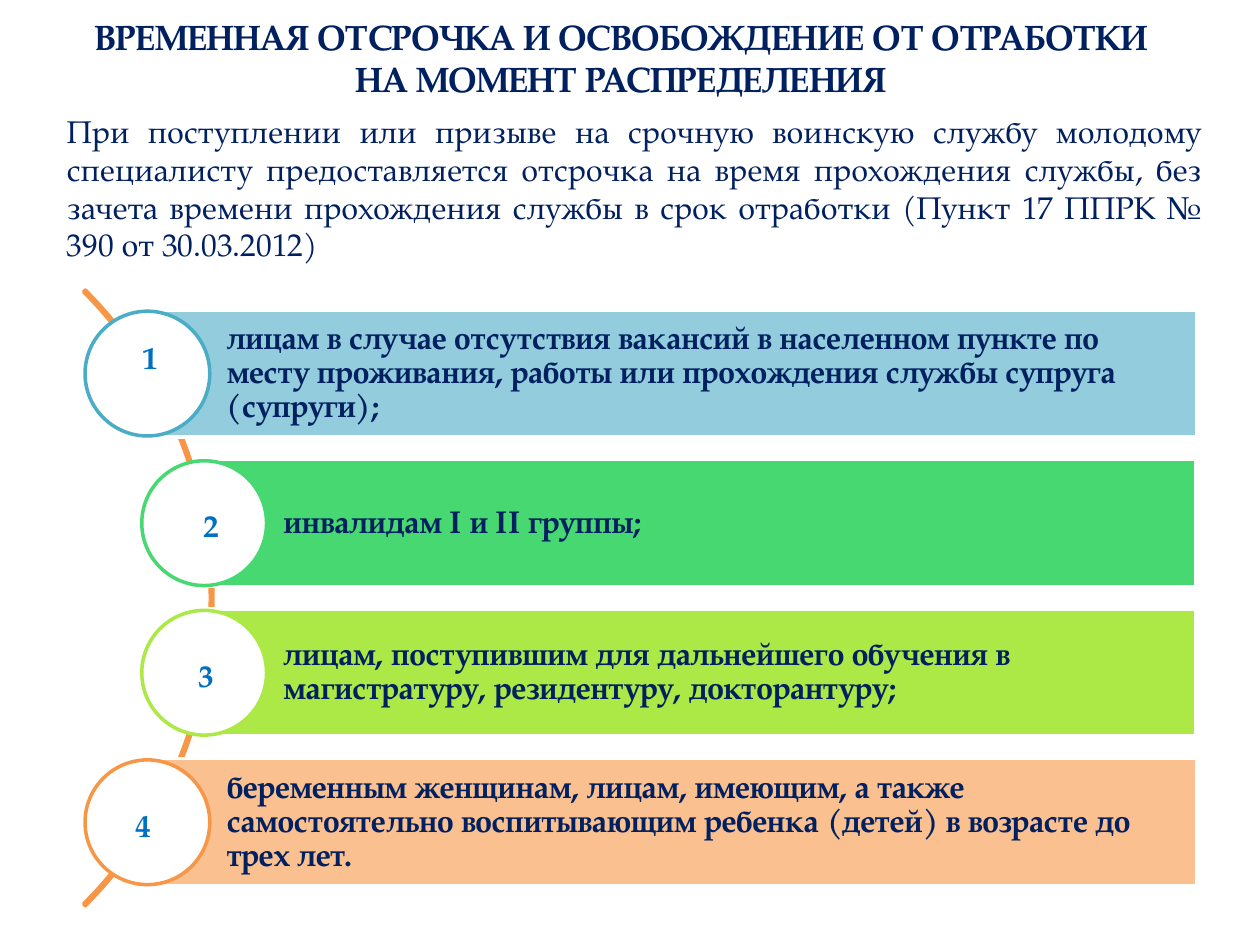
from pptx import Presentation
from pptx.dml.color import RGBColor
from pptx.enum.shapes import MSO_SHAPE as Kind
from pptx.enum.text import MSO_ANCHOR as Anchor, MSO_AUTO_SIZE as Fit, PP_ALIGN as Align
from pptx.util import Inches, Pt

FONT = "TeX Gyre Pagella"
COLORS = {"navy": "002060", "blue": "0070C0", "white": "FFFFFF", "orange": "F79646",
          "sky": "93CDDD", "teal": "4BACC6", "green": "47D872", "lime": "ACE946",
          "peach": "FAC090"}

TITLE = "ВРЕМЕННАЯ ОТСРОЧКА И ОСВОБОЖДЕНИЕ ОТ ОТРАБОТКИ НА МОМЕНТ РАСПРЕДЕЛЕНИЯ"
INTRO = ("При поступлении или призыве на срочную воинскую службу молодому специалисту "
         "предоставляется отсрочка на время прохождения службы, без зачета времени "
         "прохождения службы в срок отработки (Пункт 17 ППРК № 390 от 30.03.2012)")
# text, bar fill, ring colour, bar left, number position
ITEMS = [
    ("лицам в случае отсутствия вакансий в населенном пункте по месту проживания, "
     "работы или прохождения службы супруга (супруги);",
     "sky", "teal", 1.17, (1.03, 2.63)),
    ("инвалидам I и II группы;", "green", "green", 1.62, (1.52, 3.97)),
    ("лицам, поступившим для дальнейшего обучения в магистратуру, резидентуру, "
     "докторантуру;", "lime", "lime", 1.62, (1.48, 5.16)),
    ("беременным женщинам, лицам, имеющим, а также самостоятельно воспитывающим "
     "ребенка (детей) в возрасте до трех лет.",
     "peach", "orange", 1.17, (0.98, 6.35)),
]
TOP, STEP, BAR, RIGHT, RING = 2.46, 1.187, 1.01, 9.495, 0.99


def rgb(name):
    return RGBColor.from_string(COLORS[name])


def write(shape, text, size=18, color="navy", bold=True, align=Align.LEFT):
    shape.text_frame.text = text
    para = shape.text_frame.paragraphs[0]
    para.alignment = align
    font = para.font
    font.name, font.size, font.bold = FONT, Pt(size), bold
    font.color.rgb = rgb(color)
    return para


def draw(kind, left, top, width, height, line, fill=None):
    shape = slide.shapes.add_shape(kind, *map(Inches, (left, top, width, height)))
    shape.shadow.inherit = False
    if fill:
        shape.fill.solid()
        shape.fill.fore_color.rgb = rgb(fill)
    else:
        shape.fill.background()
    shape.line.color.rgb = rgb(line)
    shape.line.width = Pt(2)
    return shape


def add_box(left, top, width, height, wrap):
    box = slide.shapes.add_textbox(*map(Inches, (left, top, width, height)))
    box.text_frame.word_wrap = wrap
    box.text_frame.auto_size = Fit.SHAPE_TO_FIT_TEXT
    return box


def add_bar(text, fill, left, top):
    bar = draw(Kind.RECTANGLE, left, top, RIGHT - left, BAR, "white", fill)
    frame = bar.text_frame
    frame.word_wrap = True
    frame.vertical_anchor = Anchor.MIDDLE
    frame.margin_left = Inches(0.63)
    frame.margin_right = frame.margin_top = frame.margin_bottom = Inches(0.05)
    write(bar, text).line_spacing = 0.9


deck = Presentation()
deck.slide_width, deck.slide_height = Inches(10), Inches(7.5)
slide = deck.slides.add_slide(deck.slide_layouts[5])

title = slide.shapes.title
title.left, title.top, title.width, title.height = map(Inches, (0.43, 0.07, 9, 0.77))
title.text_frame.vertical_anchor = Anchor.MIDDLE
title.text_frame.auto_size = Fit.SHAPE_TO_FIT_TEXT
write(title, TITLE, size=20, align=Align.CENTER)

arc = draw(Kind.BLOCK_ARC, -5.22, 1.29, 6.91, 6.91, "orange")
for i, value in enumerate((189, 27, 0.003)):
    arc.adjustments[i] = value

for i, (text, fill, ring, left, spot) in enumerate(ITEMS):
    top = TOP + i * STEP
    add_bar(text, fill, left, top)
    draw(Kind.OVAL, left - RING / 2, top + (BAR - RING) / 2, RING, RING, ring, "white")
    write(add_box(*spot, 0.33, 0.4, False), str(i + 1), color="blue")

write(add_box(0.43, 0.84, 9.21, 1.31, True), INTRO, bold=False, align=Align.JUSTIFY)

deck.save("out.pptx")
